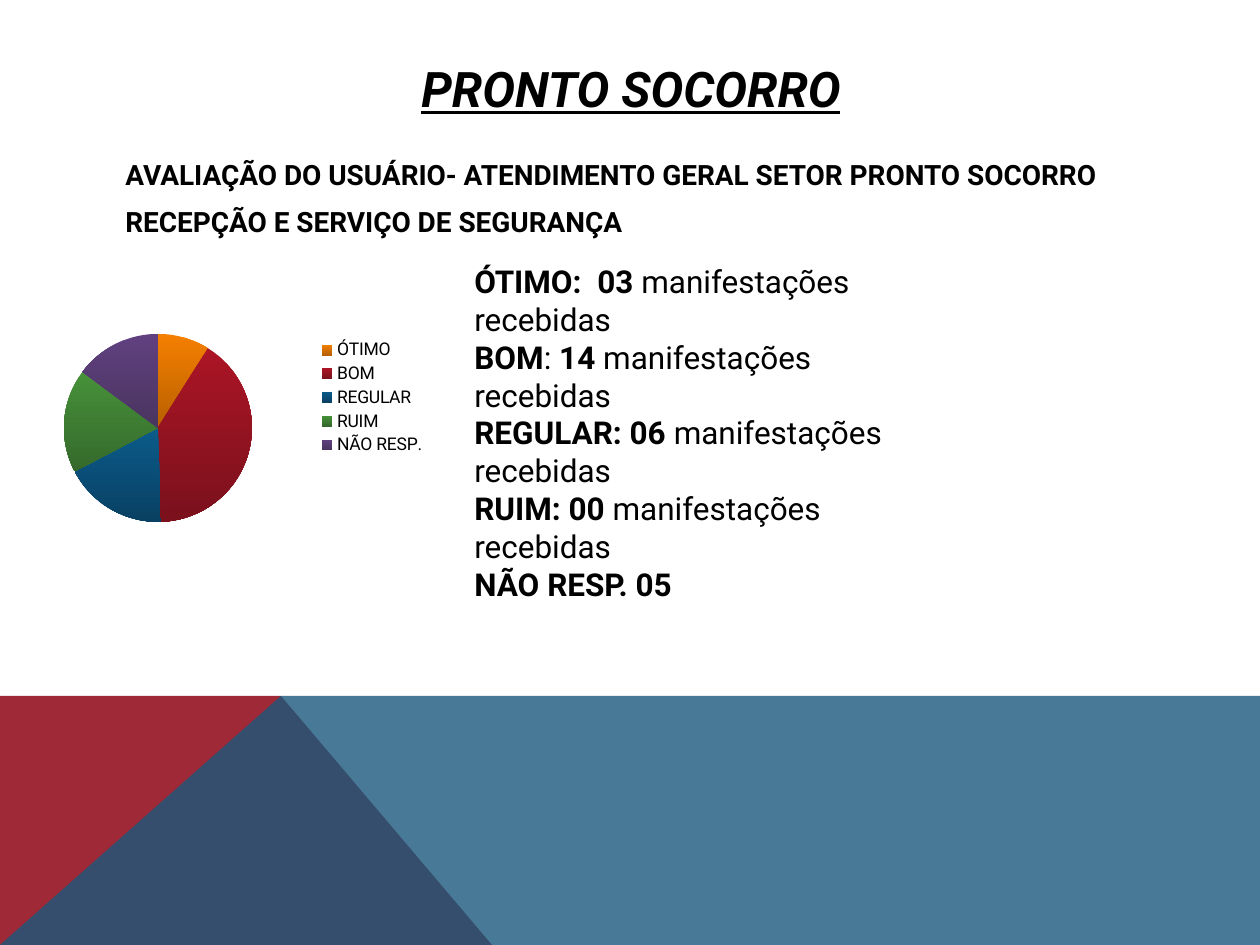
from lxml import etree
from pptx import Presentation
from pptx.chart.data import CategoryChartData
from pptx.dml.color import RGBColor
from pptx.enum.chart import XL_CHART_TYPE, XL_LEGEND_POSITION
from pptx.enum.text import MSO_ANCHOR, PP_ALIGN
from pptx.oxml.ns import qn
from pptx.util import Emu, Pt

SCALE = 914400 / 126
WIDTH, HEIGHT = 1260, 945
FONT = "Roboto"
COLORS = {"text": "000000", "red": "9F2936", "blue": "1B587C"}

# category, value, top and bottom colour of its slice
RATINGS = [
    ("ÓTIMO", 9, "F57F00", "B86000"),
    ("BOM", 41, "AB1526", "7A111C"),
    ("REGULAR", 18, "0B5B8A", "094163"),
    ("RUIM", 18, "47913A", "35692B"),
    ("NÃO RESP.", 15, "60407F", "4A3560"),
]

# each line is a list of (text, bold)
COUNTS = [
    [("ÓTIMO:  03 ", True), ("manifestações recebidas", False)],
    [("BOM", True), (": ", False), ("14 ", True), ("manifestações recebidas", False)],
    [("REGULAR: 06 ", True), ("manifestações recebidas", False)],
    [("RUIM: 00", True), (" manifestações recebidas", False)],
    [("NÃO RESP. 05", True)],
]
HEADINGS = [
    [("AVALIAÇÃO DO USUÁRIO- ATENDIMENTO GERAL SETOR PRONTO SOCORRO", True)],
    [("RECEPÇÃO E SERVIÇO DE SEGURANÇA", True)],
]


def px(length):
    return Emu(round(length * SCALE))


def rgb(name):
    return RGBColor.from_string(COLORS[name])


def apply_format(target, values):
    for name, value in values.items():
        setattr(target, name, value)


def add_text(page, box, lines, size, paragraph_format=None, **font_format):
    shape = page.shapes.add_textbox(*map(px, box))
    frame = shape.text_frame
    frame.word_wrap = True
    for index, line in enumerate(lines):
        para = frame.add_paragraph() if index else frame.paragraphs[0]
        apply_format(para, paragraph_format or {})
        for text, bold in line:
            span = para.add_run()
            span.text = text
            apply_format(span.font, {"name": FONT, "size": Pt(size), "bold": bold, **font_format})
            span.font.color.rgb = rgb("text")
    return frame


def add_polygon(page, box, points, color, opacity=100):
    left, top = box[:2]
    corners = [(px(left + x), px(top + y)) for x, y in points]
    builder = page.shapes.build_freeform(*corners[0])
    builder.add_line_segments(corners[1:], close=True)
    shape = builder.convert_to_shape()
    shape.shadow.inherit = False
    shape.line.fill.background()
    shape.fill.solid()
    shape.fill.fore_color.rgb = rgb(color)
    if opacity < 100:
        fill_color = shape.fill._xPr.find(qn("a:solidFill"))[0]
        etree.SubElement(fill_color, qn("a:alpha"), val=str(opacity * 1000))


def add_footer(page, box):
    """Red wedge on the left, with a translucent blue band rising to its peak."""
    width, height = box[2:]
    peak, wedge = 281, 492
    add_polygon(page, box, [(0, 0), (peak, 0), (wedge, height), (0, height)], "red")
    add_polygon(page, box, [(0, height), (peak, 0), (width, 0), (width, height)], "blue", 80)


def set_layout(parent, position, area, box, inner=False):
    """Fix a chart part at an area given in px inside the chart box."""
    for old in parent.findall(qn("c:layout")):
        parent.remove(old)
    layout = etree.Element(qn("c:layout"))
    manual = etree.SubElement(layout, qn("c:manualLayout"))
    if inner:
        etree.SubElement(manual, qn("c:layoutTarget"), val="inner")
    for mode in ("xMode", "yMode"):
        etree.SubElement(manual, qn(f"c:{mode}"), val="edge")
    for name, length, whole in zip("xywh", area, box[2:] * 2):
        etree.SubElement(manual, qn(f"c:{name}"), val=f"{length / whole:.4f}")
    parent.insert(position, layout)


def add_pie(page, box):
    data = CategoryChartData()
    data.categories = [rating[0] for rating in RATINGS]
    data.add_series("Series 1", [rating[1] for rating in RATINGS])
    chart = page.shapes.add_chart(XL_CHART_TYPE.PIE, *map(px, box), data).chart
    chart.has_title = False
    apply_format(chart.font, {"name": FONT, "size": Pt(10)})
    chart.font.color.rgb = rgb("text")

    plot = chart.plots[0]
    plot.vary_by_categories = True
    for index, (_, _, *shades) in enumerate(RATINGS):
        slice_format = plot.series[0].points[index].format
        slice_format.line.fill.background()
        fill = slice_format.fill
        fill.gradient()
        fill.gradient_angle = 270
        for stop, shade in zip(fill.gradient_stops, shades):
            stop.color.rgb = RGBColor.from_string(shade)

    chart.has_legend = True
    apply_format(chart.legend, {"position": XL_LEGEND_POSITION.RIGHT, "include_in_layout": True})
    chart_part = chart._chartSpace.find(qn("c:chart"))
    set_layout(chart_part.find(qn("c:plotArea")), 0, (64, 78, 188, 188), box, inner=True)
    set_layout(chart_part.find(qn("c:legend")), 1, (317, 80, 110, 123), box)


def main():
    deck = Presentation()
    deck.slide_width, deck.slide_height = px(WIDTH), px(HEIGHT)
    page = deck.slides.add_slide(deck.slide_layouts[6])
    add_footer(page, (0, 696, WIDTH, HEIGHT - 696))
    title = add_text(page, (113, 50, 1036, 76), [[("PRONTO SOCORRO", True)]], 28,
                     {"alignment": PP_ALIGN.CENTER}, italic=True, underline=True)
    title.vertical_anchor = MSO_ANCHOR.MIDDLE
    add_text(page, (113, 151, 1036, 100), HEADINGS, 16, {"space_before": Pt(8)})
    add_pie(page, (0, 256, 438, 283))
    add_text(page, (462, 256, 452, 394), COUNTS, 18)
    deck.save("out.pptx")


if __name__ == "__main__":
    main()
